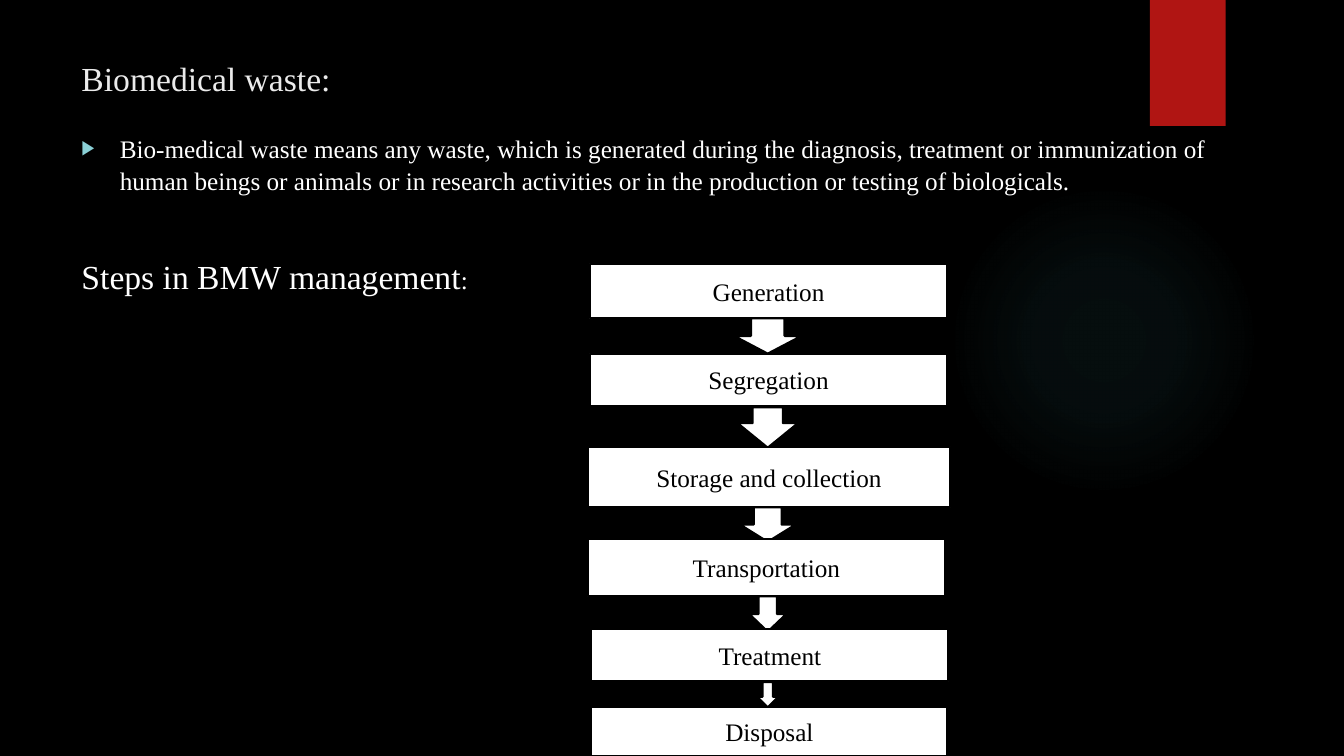
from lxml import etree
from pptx import Presentation
from pptx.dml.color import RGBColor
from pptx.enum.shapes import MSO_SHAPE
from pptx.enum.text import MSO_ANCHOR, MSO_AUTO_SIZE, PP_ALIGN
from pptx.oxml import parse_xml
from pptx.oxml.ns import qn
from pptx.util import Inches, Pt

NAMESPACE = "http://schemas.openxmlformats.org/drawingml/2006/main"
COLUMNS, ROWS = 16, 9


def colour(code):
    return RGBColor.from_string(code)


class Deck:
    font = "Times New Roman"
    heading_size, text_size = 24, 18
    ink, paper, heading, accent = "000000", "FFFFFF", "EBEBEB", "8AD0D6"
    line_spacing = 1.06

    def __init__(self):
        self.show = Presentation()
        self.show.slide_width, self.show.slide_height = Inches(13.33), Inches(7.5)
        self.slide = self.show.slides.add_slide(self.show.slide_layouts[1])
        background = self.slide.background.fill
        background.solid()
        background.fore_color.rgb = colour(self.ink)

    def cells(self, left, top, width, height):
        """Turn grid columns and rows into slide lengths."""
        column = self.show.slide_width / COLUMNS
        row = self.show.slide_height / ROWS
        return [int(n) for n in (left * column, top * row, width * column, height * row)]

    def style(self, run, size, code):
        run.font.name, run.font.size = self.font, Pt(size)
        run.font.color.rgb = colour(code)

    def placeholder(self, index, area):
        holder = self.slide.placeholders[index]
        holder.left, holder.top, holder.width, holder.height = self.cells(*area)
        frame = holder.text_frame
        frame.auto_size, frame.word_wrap = MSO_AUTO_SIZE.NONE, True
        frame.vertical_anchor = MSO_ANCHOR.TOP
        return frame

    def title(self, text, area):
        frame = self.placeholder(0, area)
        frame.text = text
        paragraph = frame.paragraphs[0]
        paragraph.alignment = PP_ALIGN.LEFT
        paragraph.line_spacing = self.line_spacing
        self.style(paragraph.runs[0], self.heading_size, self.heading)

    def body(self, definition, steps_heading, area):
        frame = self.placeholder(1, area)
        frame.text = definition
        meaning, steps = frame.paragraphs[0], frame.add_paragraph()
        self.bullet(meaning, 0.38)
        self.bullet(steps)
        meaning.space_before, steps.space_before = Pt(0), Pt(42)
        for part in steps_heading:
            steps.add_run().text = part
        for paragraph in (meaning, steps):
            paragraph.line_spacing = self.line_spacing
            for run in paragraph.runs:
                self.style(run, self.text_size, self.paper)
        steps.runs[0].font.size = Pt(self.heading_size)

    def bullet(self, paragraph, indent=0):
        properties = paragraph._p.get_or_add_pPr()
        properties.set("marL", str(Inches(indent)))
        properties.set("indent", str(-Inches(indent)))
        if not indent:
            etree.SubElement(properties, qn("a:buNone"))
            return
        bullet_colour = etree.SubElement(properties, qn("a:buClr"))
        etree.SubElement(bullet_colour, qn("a:srgbClr"), val=self.accent)
        etree.SubElement(properties, qn("a:buSzPct"), val="80000")
        etree.SubElement(properties, qn("a:buFont"), typeface="Arial")
        etree.SubElement(properties, qn("a:buChar"), char="▶")

    def shape(self, kind, area, fill, line=None):
        item = self.slide.shapes.add_shape(kind, *self.cells(*area))
        item.shadow.inherit = False
        item.fill.solid()
        item.fill.fore_color.rgb = colour(fill)
        if line:
            item.line.color.rgb, item.line.width = colour(line), Pt(1.5)
        else:
            item.line.fill.background()
        return item

    def glow(self, area, code, stops):
        halo = self.shape(MSO_SHAPE.OVAL, area, code)
        stop_list = "".join(
            f'<a:gs pos="{position * 1000}"><a:srgbClr val="{code}">'
            f'<a:alpha val="{alpha * 1000}"/></a:srgbClr></a:gs>'
            for position, alpha in stops)
        gradient = parse_xml(
            f'<a:gradFill xmlns:a="{NAMESPACE}" rotWithShape="1"><a:gsLst>{stop_list}</a:gsLst>'
            '<a:path path="circle"><a:fillToRect l="50000" t="50000" r="50000" b="50000"/>'
            '</a:path></a:gradFill>')
        solid = halo._element.spPr.find(qn("a:solidFill"))
        solid.getparent().replace(solid, gradient)

    def step(self, text, area):
        frame = self.shape(MSO_SHAPE.RECTANGLE, area, self.paper, self.ink).text_frame
        frame.text, frame.word_wrap = text, True
        frame.vertical_anchor = MSO_ANCHOR.MIDDLE
        frame.paragraphs[0].alignment = PP_ALIGN.CENTER
        self.style(frame.paragraphs[0].runs[0], self.text_size, self.ink)

    def down_arrow(self, centre, top, width, height, head=0.5):
        area = (centre - width / 2, top, width, height)
        arrow = self.shape(MSO_SHAPE.DOWN_ARROW, area, self.paper, self.ink)
        arrow.adjustments[1] = head


def main():
    deck = Deck()

    # Backdrop
    deck.glow((11.29, 2.2, 3.7, 3.7), "50B9C1", [(0, 7), (36, 6), (69, 0), (100, 0)])
    deck.shape(MSO_SHAPE.RECTANGLE, (13.69, 0, 0.9, 1.5), "B01513")

    # Definition
    deck.title("Biomedical waste:", (0.85, 0.6, 12.35, 1.84))
    deck.body(
        "Bio-medical waste means any waste, which is generated during the diagnosis, "
        "treatment or immunization of human beings or animals or in research activities "
        "or in the production or testing of biologicals.",
        ("Steps in BMW management", ":"), (0.85, 1.5, 13.8, 5.71))

    # Flow: each step with the arrow that leads on from it
    flow = [
        ("Generation", (7.02, 3.14, 4.26, 0.65), (3.79, 0.8, 0.42)),
        ("Segregation", (7.02, 4.21, 4.26, 0.62), (4.85, 0.72, 0.48, 0.61)),
        ("Storage and collection", (7, 5.32, 4.31, 0.72), (6.04, 0.66, 0.41)),
        ("Transportation", (7, 6.42, 4.25, 0.68), (7.1, 0.44, 0.42)),
        ("Treatment", (7.04, 7.49, 4.25, 0.62), (8.12, 0.25, 0.3)),
        ("Disposal", (7.04, 8.42, 4.24, 0.58), None),
    ]
    for name, box, arrow in flow:
        deck.step(name, box)
        if arrow:
            deck.down_arrow(9.14, *arrow)

    deck.show.save("out.pptx")


if __name__ == "__main__":
    main()
